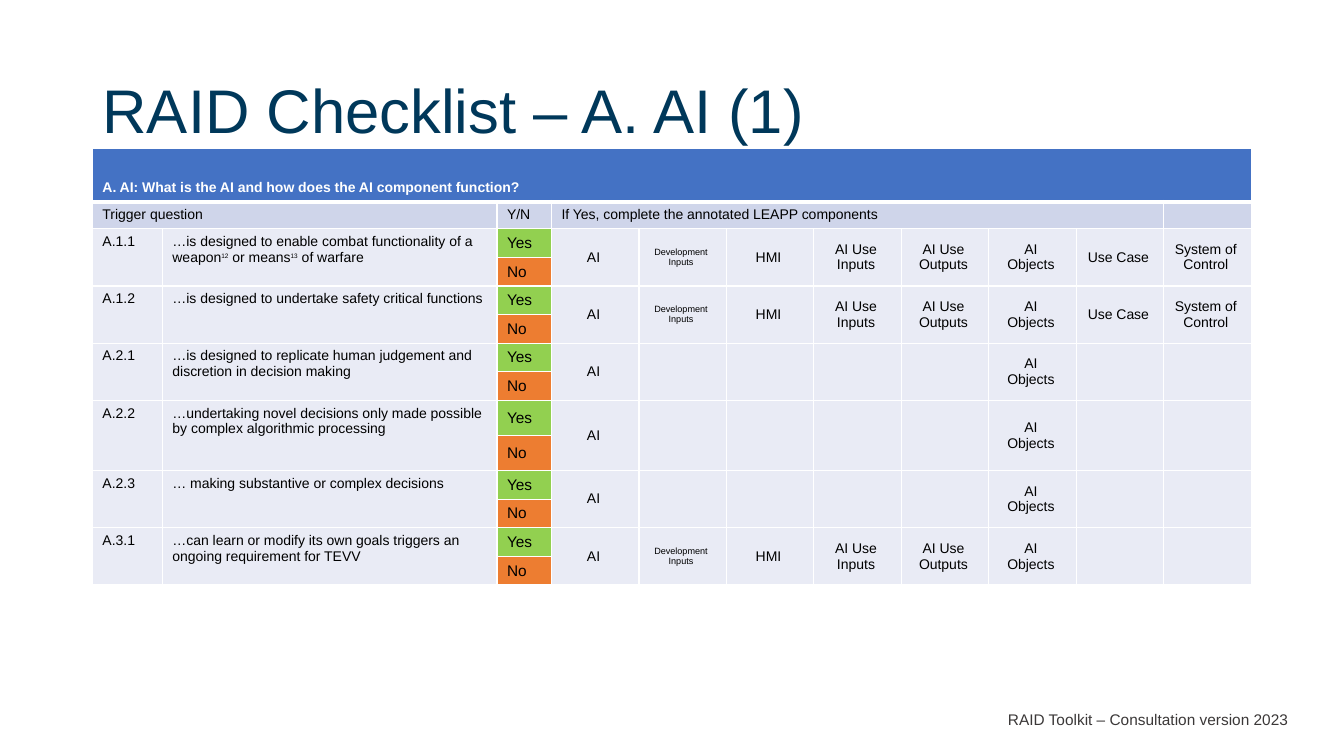
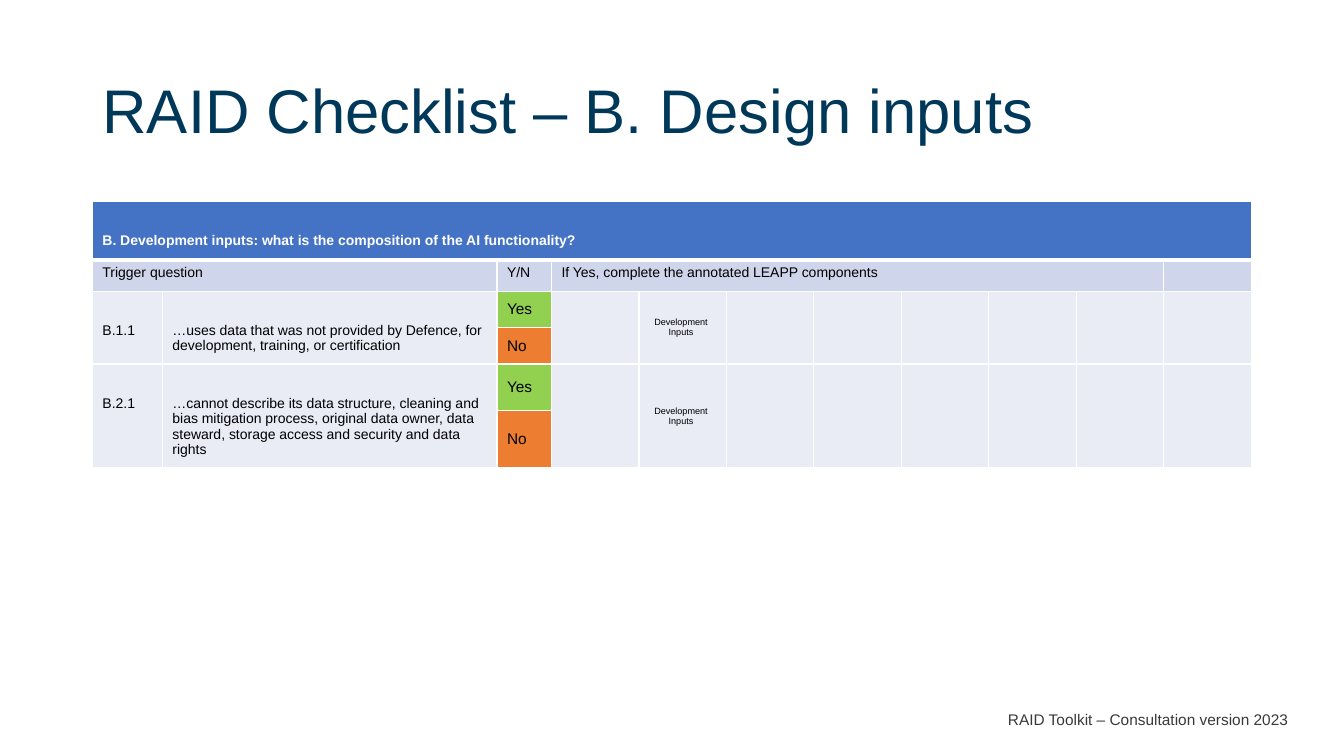
from pptx import Presentation
from pptx.dml.color import RGBColor
from pptx.enum.text import MSO_ANCHOR as ANCHOR, MSO_AUTO_SIZE as AUTO, PP_ALIGN as ALIGN
from pptx.oxml import parse_xml
from pptx.oxml.ns import nsdecls
from pptx.util import Pt

FONT = "Arial"
BLACK, WHITE, NAVY, GREY = "000000", "FFFFFF", "00385A", "3B3838"
BLUE, BAND, PALE, GREEN, ORANGE = "4472C4", "CFD5EA", "E9EBF5", "92D050", "ED7D31"
COL_WIDTHS = [50, 239, 39] + [62.5] * 8
FIRST_COMPONENT = 3
COMPONENTS = ["AI", "Development Inputs", "HMI", "AI Use Inputs", "AI Use Outputs",
              "AI Objects", "Use Case", "System of Control"]
DECISION = ["AI", "AI Objects"]

AI_ROWS = [
    ("A.1.1", "…is designed to enable combat functionality of a weapon^12^ or means^13^ of warfare",
     COMPONENTS, (20.5, 20)),
    ("A.1.2", "…is designed to undertake safety critical functions", COMPONENTS, (20, 20)),
    ("A.2.1", "…is designed to replicate human judgement and discretion in decision making",
     DECISION, (20, 20.5)),
    ("A.2.2", "…undertaking novel decisions only made possible by complex algorithmic processing",
     DECISION, (25, 25)),
    ("A.2.3", "… making substantive or complex decisions", DECISION, (20.5, 20.5)),
    ("A.3.1", "…can learn or modify its own goals triggers an ongoing requirement for TEVV",
     COMPONENTS[:6], (20, 20)),
]
INPUT_ROWS = [
    ("B.1.1", "…uses data that was not provided by Defence, for development, training, "
     "or certification", ["Development Inputs"], (26, 26)),
    ("B.2.1", "…cannot describe its data structure, cleaning and bias mitigation process, "
     "original data owner, data steward, storage access and security and data rights",
     ["Development Inputs"], (33, 39)),
]


def rgb(value):
    """Turn a hex string into a colour."""
    return RGBColor.from_string(value)


class Deck:
    """Hold the shared style and the current slide."""

    def __init__(self):
        """Start a widescreen presentation."""
        self.prs = Presentation()
        self.prs.slide_width, self.prs.slide_height = Pt(960), Pt(540)
        self.s = None

    def style(self, p, size, color, bold=False, align=ALIGN.LEFT):
        """Format one paragraph."""
        p.alignment = align
        p.font.name, p.font.size, p.font.bold = FONT, Pt(size), bold
        p.font.color.rgb = rgb(color)

    def slide(self, title):
        """Add a slide with its title and footer."""
        self.s = self.prs.slides.add_slide(self.prs.slide_layouts[5])
        self.footer("RAID Toolkit – Consultation version 2023")
        sp = self.s.shapes.title
        sp.left, sp.top, sp.width, sp.height = Pt(66), Pt(28.8), Pt(828), Pt(104.4)
        tf = sp.text_frame
        tf.text = title
        tf.auto_size, tf.vertical_anchor = AUTO.NONE, ANCHOR.MIDDLE
        tf.paragraphs[0].line_spacing = 0.9
        self.style(tf.paragraphs[0], 44, NAVY)

    def footer(self, text):
        """Add the footer line at the lower right."""
        tf = self.s.shapes.add_textbox(Pt(448), Pt(504), Pt(479.5), Pt(21)).text_frame
        tf.word_wrap = True
        tf.text = text
        self.style(tf.paragraphs[0], 11, GREY, align=ALIGN.RIGHT)

    def borders(self, cell, top=1, bottom=1):
        """Draw white lines round a cell."""
        tcPr = cell._tc.get_or_add_tcPr()
        for side, width in (("L", 1), ("R", 1), ("T", top), ("B", bottom)):
            tcPr.append(parse_xml(
                f'<a:ln{side} {nsdecls("a")} w="{Pt(width)}"><a:solidFill>'
                f'<a:srgbClr val="{WHITE}"/></a:solidFill></a:ln{side}>'))

    def cell(self, cell, text, size=10, color=BLACK, bold=False, fill=PALE,
             align=ALIGN.LEFT, anchor=ANCHOR.TOP):
        """Fill a cell with text, where ^ marks enclose superscripts."""
        cell.fill.solid()
        cell.fill.fore_color.rgb = rgb(fill)
        cell.vertical_anchor = anchor
        p = cell.text_frame.paragraphs[0]
        self.style(p, size, color, bold, align)
        if not text:
            p._p.get_or_add_endParaRPr().set("sz", str(size * 100))
            return
        for i, part in enumerate(text.split("^")):
            r = p.add_run()
            r.text = part
            if i % 2:
                r.font.size = Pt(8)
                r.font._element.set("baseline", "30000")

    def checklist(self, top, heading, rows, head_heights, question_top=3.6):
        """Add a checklist table with a Yes and a No row per question."""
        heights = [*head_heights, *(h for row in rows for h in row[3])]
        table = self.s.shapes.add_table(len(heights), len(COL_WIDTHS), Pt(66), Pt(top),
                                        Pt(sum(COL_WIDTHS)), Pt(sum(heights))).table
        table.first_row = table.horz_banding = False
        for col, width in zip(table.columns, COL_WIDTHS):
            col.width = Pt(width)
        for i, (row, height) in enumerate(zip(table.rows, heights)):
            row.height = Pt(height)
            for c in row.cells:
                self.borders(c, top=3 if i == 1 else 1, bottom=3 if i == 0 else 1)

        for row, first, last in ((0, 0, 10), (1, 0, 1), (1, 3, 9)):
            table.cell(row, first).merge(table.cell(row, last))
        self.cell(table.cell(0, 0), heading, color=WHITE, bold=True, fill=BLUE)
        table.cell(0, 0).margin_top = Pt(22.5)
        labels = {0: "Trigger question", 2: "Y/N",
                  3: "If Yes, complete the annotated LEAPP components", 10: ""}
        for col, text in labels.items():
            self.cell(table.cell(1, col), text, fill=BAND)

        for i, (code, question, needed, _) in enumerate(rows):
            self.question(table, 2 + 2 * i, code, question, needed, question_top)

    def question(self, table, row, code, question, needed, margin_top):
        """Fill the two rows of one trigger question."""
        for col in range(len(COL_WIDTHS)):
            if col != 2:
                table.cell(row, col).merge(table.cell(row + 1, col))
        for col, text in enumerate((code, question)):
            self.cell(table.cell(row, col), text)
            table.cell(row, col).margin_top = Pt(margin_top)
        for i, (text, fill) in enumerate((("Yes", GREEN), ("No", ORANGE))):
            self.cell(table.cell(row + i, 2), text, 11, fill=fill, anchor=ANCHOR.MIDDLE)
        for col, name in enumerate(COMPONENTS, FIRST_COMPONENT):
            c = table.cell(row, col)
            self.cell(c, name if name in needed else "",
                      6.5 if name == "Development Inputs" and name in needed else 10,
                      align=ALIGN.CENTER, anchor=ANCHOR.MIDDLE)
            c.margin_right = Pt(9.6)


def main():
    """Build and save the two checklist slides."""
    deck = Deck()
    deck.slide("RAID Checklist – A. AI (1)")
    deck.checklist(106, "A. AI: What is the AI and how does the AI component function?",
                   AI_ROWS, (38, 18))
    deck.slide("RAID Checklist – B. Design inputs")
    deck.checklist(144, "B. Development inputs: what is the composition of the AI functionality?",
                   INPUT_ROWS, (41.5, 22.5), question_top=22.5)
    deck.prs.save("out.pptx")


if __name__ == "__main__":
    main()
